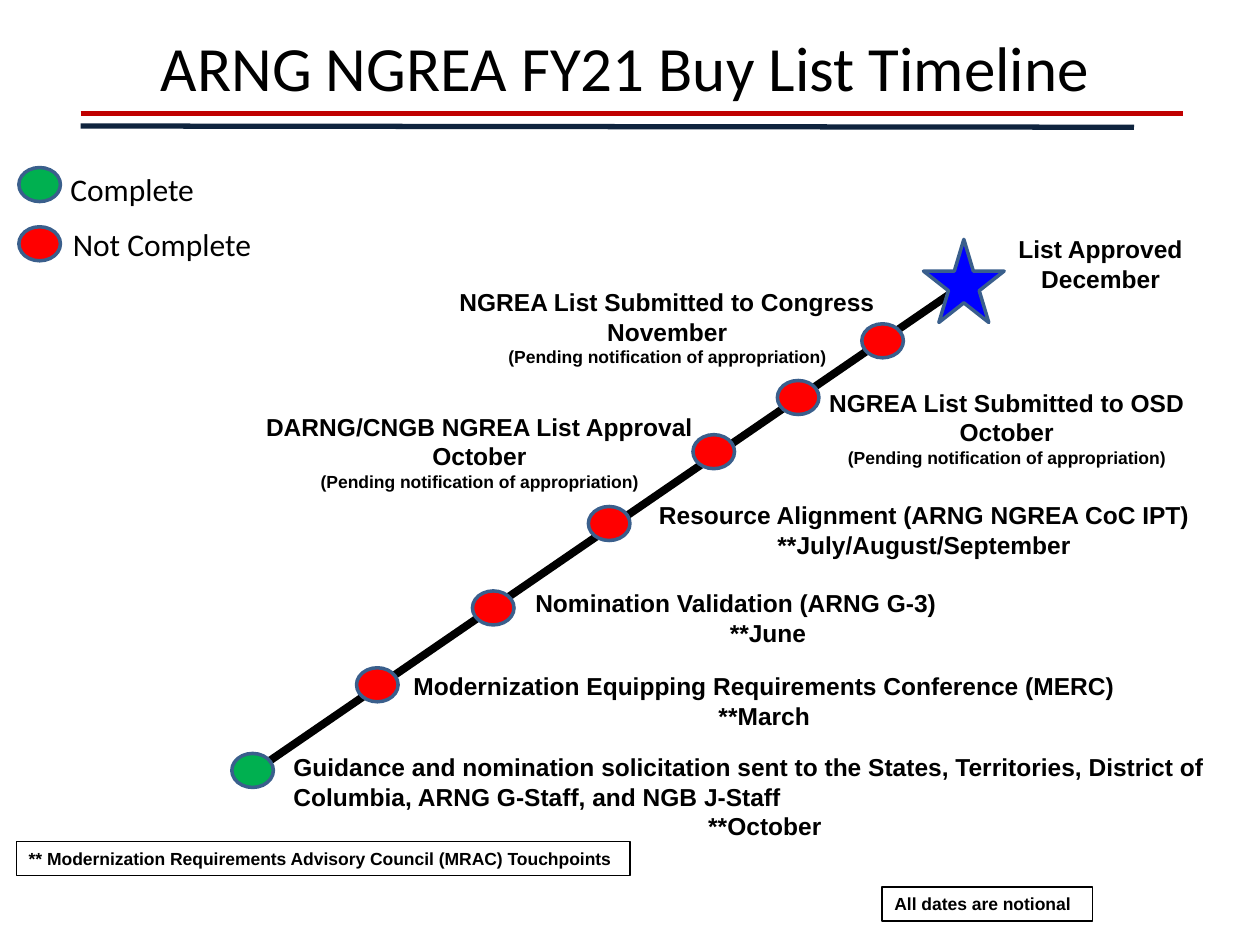
from dataclasses import dataclass

from pptx import Presentation
from pptx.dml.color import RGBColor
from pptx.enum.shapes import MSO_CONNECTOR, MSO_SHAPE
from pptx.enum.text import MSO_ANCHOR, MSO_AUTO_SIZE, PP_ALIGN
from pptx.oxml.ns import qn
from pptx.util import Inches, Pt
from lxml import etree

STRAIGHT = MSO_CONNECTOR.STRAIGHT
OVAL, STAR, RECT = MSO_SHAPE.OVAL, MSO_SHAPE.STAR_5_POINT, MSO_SHAPE.RECTANGLE
TOP, MIDDLE = MSO_ANCHOR.TOP, MSO_ANCHOR.MIDDLE
GROW, FIXED = MSO_AUTO_SIZE.SHAPE_TO_FIT_TEXT, MSO_AUTO_SIZE.NONE
LEFT, CENTER, RIGHT = PP_ALIGN.LEFT, PP_ALIGN.CENTER, PP_ALIGN.RIGHT


@dataclass(frozen=True)
class Theme:
    """Colours, fonts and type sizes of the slide."""
    black: str = "000000"
    crimson: str = "C00000"
    navy: str = "0F243E"
    done: str = "00B050"
    open: str = "FF0000"
    star: str = "0000FF"
    edge: str = "3A5F8C"
    head: str = "Calibri"
    body: str = "Arial"
    title: int = 36
    key: int = 18
    label: int = 14
    note: int = 10


THEME = Theme()
COLS, ROWS = 100, 75
DOT = (3.3, 2.7)
PENDING = "(Pending notification of appropriation)"

DOTS = [
    (18.4, 59.8, THEME.done), (28.3, 53, THEME.open), (37.5, 46.9, THEME.open),
    (46.7, 40.2, THEME.open), (55, 34.5, THEME.open), (61.7, 30.2, THEME.open),
    (68.4, 25.7, THEME.open),
]
KEYS = [
    ((1.5, 13.3), THEME.done, (4.6, 13, 12, 4), "Complete"),
    ((1.5, 18), THEME.open, (4.8, 17.4, 16.3, 4), "Not Complete"),
]
STEPS = [
    ((22.3, 59.2, 76.8, 8.1), True, LEFT,
     ["Guidance and nomination solicitation sent to the States, Territories, "
      "District of Columbia, ARNG G-Staff, and NGB J-Staff", "**October"]),
    ((31.7, 52.8, 57.9, 5.7), False, CENTER,
     ["Modernization Equipping Requirements Conference (MERC)", "**March"]),
    ((41.5, 46.2, 38.9, 8.1), True, LEFT,
     ["Nomination Validation (ARNG G-3)", "**June"]),
    ((50, 39.2, 46.7, 5.7), True, CENTER,
     ["Resource Alignment (ARNG NGREA CoC IPT) **July/August/September"]),
    ((20, 32.2, 36.1, 7.4), False, CENTER,
     ["DARNG/CNGB NGREA List Approval", "October", PENDING]),
    ((64.7, 30.3, 30.4, 7.4), False, CENTER,
     ["NGREA List Submitted to OSD", "October", PENDING]),
    ((35.4, 22.3, 35.1, 7.4), False, CENTER,
     ["NGREA List Submitted to Congress", "November", PENDING]),
    ((79.8, 18.1, 15.1, 5.7), False, CENTER, ["List Approved", "December"]),
]
NOTES = [
    ((1.3, 66.8, 48.7, 2.7),
     "** Modernization Requirements Advisory Council (MRAC) Touchpoints"),
    ((70, 70.4, 16.7, 2.7), "All dates are notional"),
]


def cells(*spans):
    """Turn grid spans of a tenth of an inch into lengths."""
    return [Inches(span / 10) for span in spans]


def style(par, size, face, bold=False, align=LEFT):
    """Format one paragraph and its runs."""
    par.alignment = align
    for run in par.runs:
        run.font.size = Pt(size)
        run.font.name = face
        run.font.bold = bold
        run.font.color.rgb = RGBColor.from_string(THEME.black)


def set_frame(frame, wrap, anchor=TOP, fit=GROW):
    """Set how a text frame wraps, sits and grows."""
    frame.word_wrap = wrap
    frame.vertical_anchor = anchor
    frame.auto_size = fit


def add_title(slide, text):
    """Place and format the title."""
    title = slide.shapes.title
    title.left, title.top, title.width, title.height = cells(11, 0.7, 76.5, 9.2)
    title.text_frame.text = text
    set_frame(title.text_frame, True, MIDDLE, FIXED)
    style(title.text_frame.paragraphs[0], THEME.title, THEME.head, align=RIGHT)


def add_line(slide, ends, color, width, arrow=False):
    """Draw a straight line, with an arrowhead if asked."""
    line = slide.shapes.add_connector(STRAIGHT, *cells(*ends))
    line.line.color.rgb = RGBColor.from_string(color)
    line.line.width = Pt(width)
    if arrow:
        tail = etree.SubElement(line.line._get_or_add_ln(), qn("a:tailEnd"))
        tail.set("type", "triangle")
    etree.SubElement(line._element.spPr, qn("a:effectLst"))


def add_mark(slide, kind, box, fill, edge=THEME.edge, width=2):
    """Draw a preset shape, hollow when it has no fill."""
    mark = slide.shapes.add_shape(kind, *cells(*box))
    mark.shadow.inherit = False
    if fill:
        mark.fill.solid()
        mark.fill.fore_color.rgb = RGBColor.from_string(fill)
    else:
        mark.fill.background()
    mark.line.color.rgb = RGBColor.from_string(edge)
    mark.line.width = Pt(width)
    return mark


def add_step(slide, box, wrap, align, lines):
    """Label a milestone with its name, date and remark."""
    frame = slide.shapes.add_textbox(*cells(*box)).text_frame
    frame.text = "\n".join(lines)
    set_frame(frame, wrap)
    for i, par in enumerate(frame.paragraphs):
        size = THEME.note if par.text == PENDING else THEME.label
        style(par, size, THEME.body, True, CENTER if i else align)


def add_key(slide, spot, fill, box, text):
    """Add one entry of the colour key."""
    add_mark(slide, OVAL, (*spot, *DOT), fill)
    frame = slide.shapes.add_textbox(*cells(*box)).text_frame
    frame.text = text
    set_frame(frame, False)
    style(frame.paragraphs[0], THEME.key, THEME.head)


def add_note(slide, box, text):
    """Add a framed footnote."""
    frame = add_mark(slide, RECT, box, None, THEME.black, 0.75).text_frame
    frame.text = text
    set_frame(frame, True)
    style(frame.paragraphs[0], THEME.note, THEME.body, True)


def main():
    """Build the timeline slide."""
    deck = Presentation()
    deck.slide_width, deck.slide_height = cells(COLS, ROWS)
    slide = deck.slides.add_slide(deck.slide_layouts[5])
    add_line(slide, (6.4, 9, 93.9, 9), THEME.crimson, 3)
    add_line(slide, (6.4, 10, 90, 10.1), THEME.navy, 3)
    add_title(slide, "ARNG NGREA FY21 Buy List Timeline")
    add_line(slide, (18.9, 62.1, 76.9, 22.3), THEME.black, 4.5, True)
    for step in STEPS:
        add_step(slide, *step)
    add_mark(slide, STAR, (73.3, 19, 6.4, 6.6), THEME.star)
    for col, row, fill in DOTS:
        add_mark(slide, OVAL, (col, row, *DOT), fill)
    for note in NOTES:
        add_note(slide, *note)
    for key in KEYS:
        add_key(slide, *key)
    deck.save("out.pptx")


if __name__ == "__main__":
    main()
